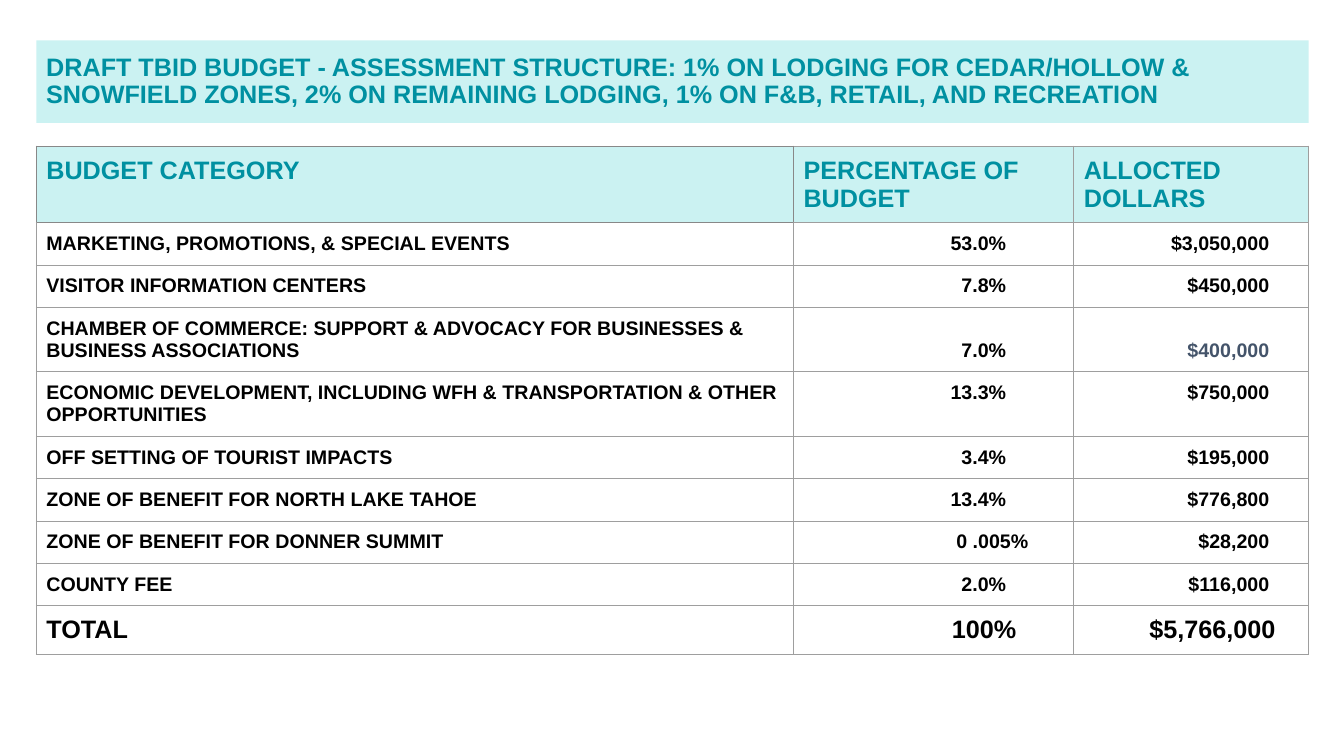
from dataclasses import dataclass

from lxml.etree import SubElement
from pptx import Presentation
from pptx.dml.color import RGBColor
from pptx.dml.fill import FillFormat
from pptx.enum.shapes import MSO_SHAPE
from pptx.enum.text import MSO_ANCHOR, PP_ALIGN
from pptx.oxml import parse_xml
from pptx.oxml.ns import nsdecls, qn
from pptx.slide import Slide
from pptx.table import _Cell
from pptx.text.text import TextFrame
from pptx.util import Emu, Pt

PX = 9144
LEFT, WIDTH = 36, 1262
TEAL, AQUA, BLACK, SLATE = "0090A1", "33CCCC", "000000", "44546A"
GRID, HEADING_GRID = "9E9E9E", "888888"
COLUMN_WIDTHS = (751, 278, 233)
CELL_INSET = 10
HEADLINE = (
    "DRAFT TBID BUDGET - ASSESSMENT STRUCTURE: 1% ON LODGING FOR CEDAR/HOLLOW & "
    "SNOWFIELD ZONES, 2% ON REMAINING LODGING, 1% ON F&B, RETAIL, AND RECREATION"
)


@dataclass(frozen=True)
class BudgetLine:
    """One row of the budget, with the right insets of its figures."""

    category: str
    share: str
    dollars: str
    height: int = 42
    size: int = 14
    color: str = BLACK
    dollars_color: str = BLACK
    share_inset: int = 67
    dollars_inset: int = 39
    anchor: MSO_ANCHOR = MSO_ANCHOR.TOP
    heading: bool = False


BUDGET = (
    BudgetLine("BUDGET CATEGORY", "PERCENTAGE OF BUDGET", "ALLOCTED DOLLARS", 76, 18, TEAL, TEAL,
               CELL_INSET, CELL_INSET, heading=True),
    BudgetLine("MARKETING, PROMOTIONS, & SPECIAL EVENTS", "53.0%", "$3,050,000"),
    BudgetLine("VISITOR INFORMATION CENTERS", "7.8%", "$450,000"),
    BudgetLine("CHAMBER OF COMMERCE: SUPPORT & ADVOCACY FOR BUSINESSES & BUSINESS ASSOCIATIONS",
               "7.0%", "$400,000", 64, dollars_color=SLATE, anchor=MSO_ANCHOR.BOTTOM),
    BudgetLine("ECONOMIC DEVELOPMENT, INCLUDING WFH & TRANSPORTATION & OTHER OPPORTUNITIES",
               "13.3%", "$750,000", 64),
    BudgetLine("OFF SETTING OF TOURIST IMPACTS", "3.4%", "$195,000"),
    BudgetLine("ZONE OF BENEFIT FOR NORTH LAKE TAHOE", "13.4%", "$776,800"),
    BudgetLine("ZONE OF BENEFIT FOR DONNER SUMMIT", "0 .005%", "$28,200", share_inset=45),
    BudgetLine("COUNTY FEE", "2.0%", "$116,000"),
    BudgetLine("TOTAL", "100%", "$5,766,000", 48, 18, share_inset=57, dollars_inset=33),
)


def px(length: int) -> Emu:
    """Turn px into EMU."""
    return Emu(length * PX)


def rgb(color: str) -> RGBColor:
    """Turn a hex string into a colour."""
    return RGBColor.from_string(color)


def tint(fill: FillFormat, properties) -> None:
    """Fill with a quarter-strength aqua."""
    fill.solid()
    fill.fore_color.rgb = rgb(AQUA)
    aqua = properties.find(qn("a:solidFill")).find(qn("a:srgbClr"))
    SubElement(aqua, qn("a:alpha"), val="25000")


def write(frame: TextFrame, text: str, size: int, color: str, align: PP_ALIGN) -> None:
    """Set the bold Arial text of a frame."""
    frame.text = text
    paragraph = frame.paragraphs[0]
    paragraph.alignment = align
    for run in paragraph.runs:
        run.font.name = "Arial"
        run.font.size = Pt(size)
        run.font.bold = True
        run.font.color.rgb = rgb(color)


def draw_borders(cell: _Cell, row: int, column: int) -> None:
    """Rule the four sides of a cell, darker around the first heading."""
    darker = {(0, 1, "L"), (1, 0, "T")}
    properties = cell._tc.get_or_add_tcPr()
    for position, side in enumerate("LRTB"):
        dark = (row, column) == (0, 0) or (row, column, side) in darker
        color = HEADING_GRID if dark else GRID
        properties.insert(position, parse_xml(
            f'<a:ln{side} {nsdecls("a")} w="9525"><a:solidFill>'
            f'<a:srgbClr val="{color}"/></a:solidFill></a:ln{side}>'
        ))


def draw_headline(slide: Slide) -> None:
    """Draw the headline band."""
    band = slide.shapes.add_shape(MSO_SHAPE.RECTANGLE, px(LEFT), px(40), px(WIDTH), px(82))
    band.shadow.inherit = False
    band.line.fill.background()
    tint(band.fill, band._element.spPr)
    band.text_frame.word_wrap = True
    band.text_frame.vertical_anchor = MSO_ANCHOR.MIDDLE
    write(band.text_frame, HEADLINE, 18, TEAL, PP_ALIGN.LEFT)
    band.text_frame.paragraphs[0].line_spacing = 0.9


def draw_cell(cell: _Cell, line: BudgetLine, row: int, column: int) -> None:
    """Fill in one cell of the budget."""
    text = (line.category, line.share, line.dollars)[column]
    color = (line.color, line.color, line.dollars_color)[column]
    inset = (CELL_INSET, line.share_inset, line.dollars_inset)[column]
    figure = column > 0 and not line.heading
    cell.margin_left = cell.margin_top = cell.margin_bottom = px(CELL_INSET)
    cell.margin_right = px(inset)
    cell.vertical_anchor = line.anchor if figure else MSO_ANCHOR.TOP
    write(cell.text_frame, text, line.size, color, PP_ALIGN.RIGHT if figure else PP_ALIGN.LEFT)
    if line.heading:
        tint(cell.fill, cell._tc.get_or_add_tcPr())
    else:
        cell.fill.background()
    draw_borders(cell, row, column)


def draw_budget(slide: Slide) -> None:
    """Draw the budget table."""
    height = sum(line.height for line in BUDGET)
    budget = slide.shapes.add_table(
        len(BUDGET), len(COLUMN_WIDTHS), px(LEFT), px(145), px(WIDTH), px(height)
    ).table
    budget.first_row = budget.horz_banding = False
    for column, width in enumerate(COLUMN_WIDTHS):
        budget.columns[column].width = px(width)
    for row, line in enumerate(BUDGET):
        budget.rows[row].height = px(line.height)
        for column in range(len(COLUMN_WIDTHS)):
            draw_cell(budget.cell(row, column), line, row, column)


def main() -> None:
    """Build and save the budget slide."""
    deck = Presentation()
    deck.slide_width, deck.slide_height = px(1333), px(750)
    slide = deck.slides.add_slide(deck.slide_layouts[6])
    draw_headline(slide)
    draw_budget(slide)
    deck.save("out.pptx")


if __name__ == "__main__":
    main()
